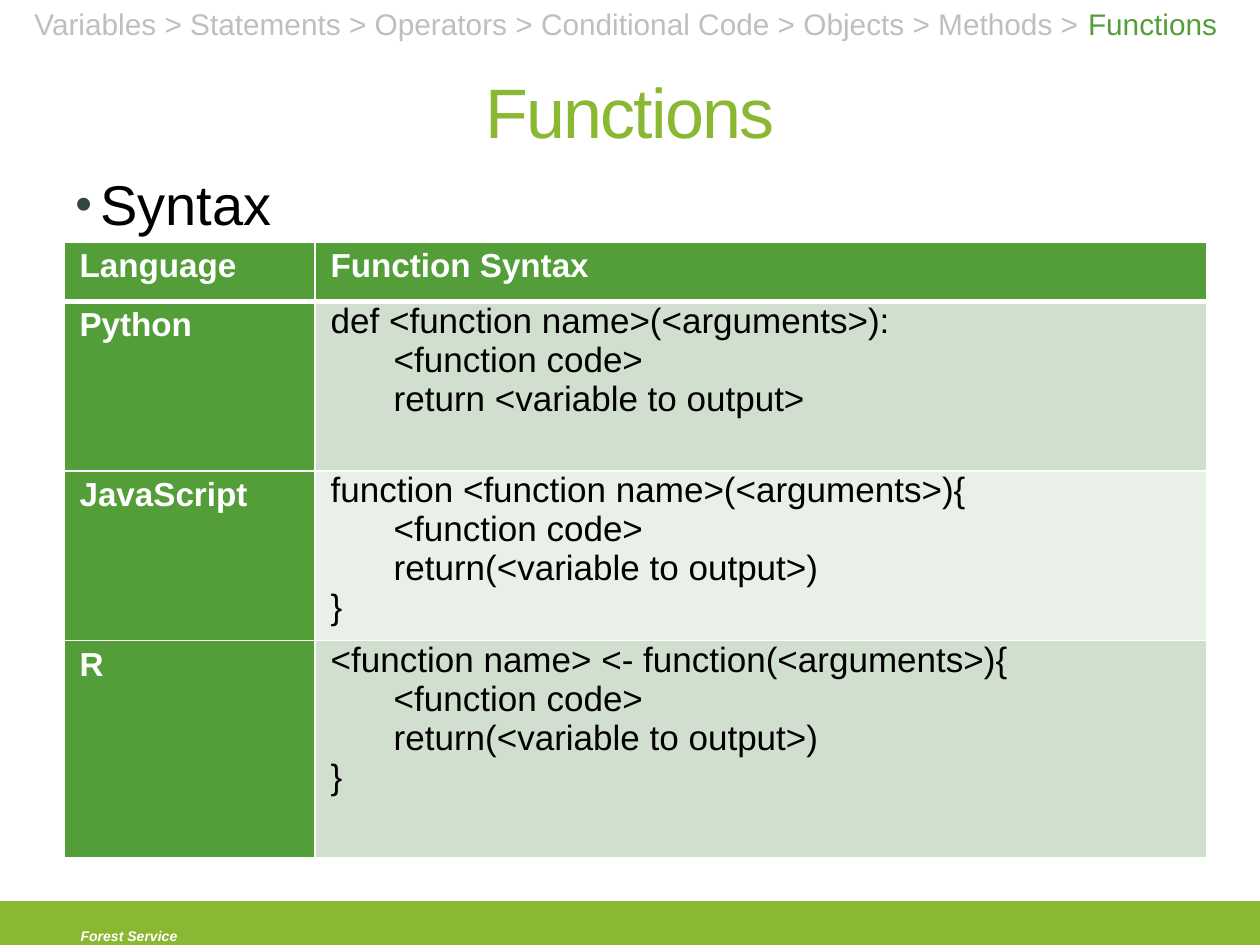
from pptx import Presentation
from pptx.util import Pt
from pptx.dml.color import RGBColor
from pptx.enum.shapes import MSO_SHAPE
from pptx.enum.text import PP_ALIGN, MSO_ANCHOR
from pptx.oxml import parse_xml
from pptx.oxml.ns import nsdecls

LIME = RGBColor(0x8A, 0xB8, 0x33)
GREEN = RGBColor(0x54, 0x9E, 0x39)
PALE = RGBColor(0xD1, 0xDF, 0xCE)
PALER = RGBColor(0xE9, 0xF0, 0xE8)
GREY = RGBColor(0xBF, 0xBF, 0xBF)
WHITE = RGBColor(0xFF, 0xFF, 0xFF)
BLACK = RGBColor(0, 0, 0)


def style(p, size, color, bold=False, italic=False):
    for r in p.runs:
        f = r.font
        f.name, f.size, f.bold, f.italic = "Arial", Pt(size), bold, italic
        f.color.rgb = color


def add_text(x, y, w, h, text, size, color, **kw):
    tf = s.shapes.add_textbox(Pt(x), Pt(y), Pt(w), Pt(h)).text_frame
    tf.word_wrap = True
    tf.text = text
    style(tf.paragraphs[0], size, color, **kw)
    return tf


prs = Presentation()
prs.slide_width, prs.slide_height = Pt(720), Pt(540)
s = prs.slides.add_slide(prs.slide_layouts[6])

# Footer bar
sp = s.shapes.add_shape(MSO_SHAPE.RECTANGLE, 0, Pt(516), Pt(720), Pt(26))
sp.shadow.inherit = False
sp.fill.solid()
sp.fill.fore_color.rgb = LIME
sp.line.color.rgb = LIME
sp.line.width = Pt(2)
add_text(39, 526.3, 147, 17, "Forest Service", 8, WHITE, bold=True, italic=True)

# Title
tf = add_text(36, 24, 648, 78, "Functions", 40, LIME)
tf.vertical_anchor = MSO_ANCHOR.MIDDLE
p = tf.paragraphs[0]
p.alignment = PP_ALIGN.CENTER
p.runs[0].font._element.set("spc", "-100")

# Bullet
tf = add_text(36, 93.6, 648, 396, "Syntax", 32, BLACK)
pPr = tf.paragraphs[0]._p.get_or_add_pPr()
pPr.set("marL", str(Pt(14.4)))
pPr.set("indent", str(Pt(-14.4)))
for xml in ('<a:buClr {}><a:srgbClr val="34473D"/></a:buClr>',
            '<a:buSzPct {} val="85000"/>',
            '<a:buFont {} typeface="Arial"/>',
            '<a:buChar {} char="•"/>'):
    pPr.append(parse_xml(xml.format(nsdecls("a"))))

# Syntax table; indented lines start with a tab
rows = [
    ("Language", ["Function Syntax"], 34),
    ("Python", ["def <function name>(<arguments>):",
                "\t<function code>",
                "\treturn <variable to output>"], 97),
    ("JavaScript", ["function <function name>(<arguments>){",
                    "\t<function code>",
                    "\treturn(<variable to output>)",
                    "}"], 97),
    ("R", ["<function name> <- function(<arguments>){",
           "\t<function code>",
           "\treturn(<variable to output>)",
           "}"], 124),
]
table = s.shapes.add_table(4, 2, Pt(36.5), Pt(138.2), Pt(653), Pt(352)).table
table.columns[0].width, table.columns[1].width = Pt(143.5), Pt(509.5)
for i, (language, code, height) in enumerate(rows):
    table.rows[i].height = Pt(height)
    for j, lines in enumerate(([language], code)):
        cell = table.cell(i, j)
        label = i == 0 or j == 0
        cell.margin_left = cell.margin_right = Pt(9)
        cell.margin_top = cell.margin_bottom = 0
        tf = cell.text_frame
        for k, line in enumerate(lines):
            p = tf.add_paragraph() if k else tf.paragraphs[0]
            p.text = line.strip("\t")
            if line.startswith("\t"):
                pPr = p._p.get_or_add_pPr()
                pPr.set("marL", str(Pt(36)))
                pPr.set("indent", "0")
            if label:
                p.line_spacing = 1.15
            style(p, 19 if label else 20, WHITE if label else BLACK, bold=label)
        # White borders, thicker between header and body
        tcPr = cell._tc.get_or_add_tcPr()
        for side in ("L", "R", "T", "B"):
            thick = (i, side) in ((0, "B"), (1, "T"))
            tcPr.append(parse_xml(
                f'<a:ln{side} {nsdecls("a")} w="{Pt(3 if thick else 1)}">'
                f'<a:solidFill><a:srgbClr val="{WHITE}"/></a:solidFill></a:ln{side}>'))
        cell.fill.solid()
        cell.fill.fore_color.rgb = GREEN if label else (PALE if i % 2 else PALER)

# Breadcrumb
topics = ["Variables", "Statements", "Operators", "Conditional Code", "Objects", "Methods"]
tf = add_text(0, 0, 720, 28, " > ".join(topics) + " > ", 17, GREY)
p = tf.paragraphs[0]
p.alignment = PP_ALIGN.CENTER
r = p.add_run()
r.text = "Functions "
style(p, 17, GREY)
r.font.color.rgb = GREEN

prs.save("out.pptx")
